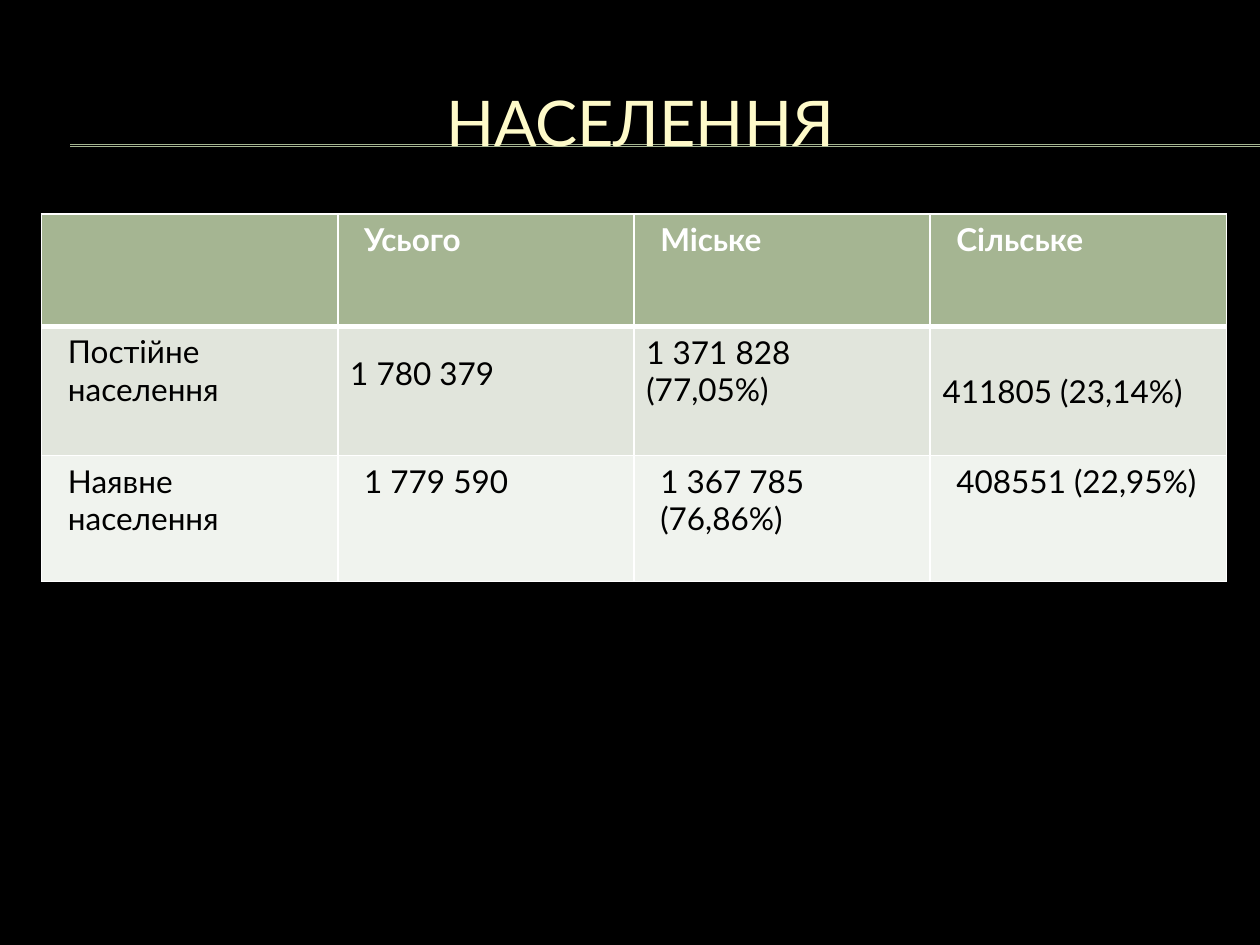
from lxml.etree import SubElement
from pptx import Presentation
from pptx.dml.color import RGBColor
from pptx.enum.shapes import MSO_CONNECTOR
from pptx.enum.text import MSO_ANCHOR, PP_ALIGN
from pptx.oxml.ns import qn
from pptx.util import Cm, Pt

COLORS = {"black": "000000", "white": "FFFFFF", "green": "A5B592",
          "cream": "FEFAC9", "band1": "E1E5DC", "band2": "F0F3EE"}
FONT = "Lato"


def rgb(name):
    return RGBColor.from_string(COLORS[name])


def set_border(cell, side, width):
    ln = SubElement(cell._tc.get_or_add_tcPr(), qn(f"a:ln{side}"), w=str(Pt(width)))
    fill = SubElement(ln, qn("a:solidFill"))
    SubElement(fill, qn("a:srgbClr"), val=COLORS["white"])


prs = Presentation()
prs.slide_width, prs.slide_height = Cm(25.4), Cm(19.05)
s = prs.slides.add_slide(prs.slide_layouts[5])
s.background.fill.solid()
s.background.fill.fore_color.rgb = rgb("black")

# Double rule behind the title
for y in (2.92, 2.95):
    rule = s.shapes.add_connector(MSO_CONNECTOR.STRAIGHT, Cm(1.42), Cm(y), Cm(25.4), Cm(y))
    rule.line.color.rgb = rgb("green")
    rule.line.width = Pt(0.75)
    SubElement(rule._element.spPr, qn("a:effectLst"))

# Title, brought in front of the rules
title = s.shapes.title
s.shapes._spTree.append(title._element)
title.left, title.top, title.width, title.height = Cm(0.84), Cm(1.27), Cm(24.13), Cm(2.34)
tf = title.text_frame
tf.vertical_anchor = MSO_ANCHOR.MIDDLE
p = tf.paragraphs[0]
p.text = "НАСЕЛЕННЯ"
p.alignment = PP_ALIGN.CENTER
p.font.name, p.font.size = FONT, Pt(36)
p.font.color.rgb = rgb("cream")

# Population table
rows = [["", "Усього", "Міське", "Сільське"],
        ["Постійне населення", "1 780 379", "1 371 828 (77,05%)", "411805 (23,14%)"],
        ["Наявне населення", "1 779 590", "1 367 785 (76,86%)", "408551 (22,95%)"]]
heights = [2.27, 2.54, 2.54]
fills = ["green", "band1", "band2"]
col_width = 5.97
table = s.shapes.add_table(3, 4, Cm(0.84), Cm(4.31), Cm(4 * col_width), Cm(sum(heights))).table
for col in table.columns:
    col.width = Cm(col_width)

for i, values in enumerate(rows):
    table.rows[i].height = Cm(heights[i])
    for j, value in enumerate(values):
        cell = table.cell(i, j)
        cell.margin_left = cell.margin_right = Cm(0.53)
        cell.margin_top = cell.margin_bottom = Cm(0.13)
        for side in "LRTB":
            thick = (i, side) in ((0, "B"), (1, "T"))
            set_border(cell, side, 3 if thick else 1)
        cell.fill.solid()
        cell.fill.fore_color.rgb = rgb(fills[i])
        p = cell.text_frame.paragraphs[0]
        p.text = value
        p.font.name, p.font.size, p.font.bold = FONT, Pt(18), i == 0
        p.font.color.rgb = rgb("white" if i == 0 else "black")

# Resident figures sit closer to the left edge, at their own heights
for j, bottom in ((1, 0.86), (2, 0.95), (3, 0.13)):
    cell = table.cell(1, j)
    cell.vertical_anchor = MSO_ANCHOR.MIDDLE
    cell.margin_left, cell.margin_bottom = Cm(0.25), Cm(bottom)

prs.save("out.pptx")
